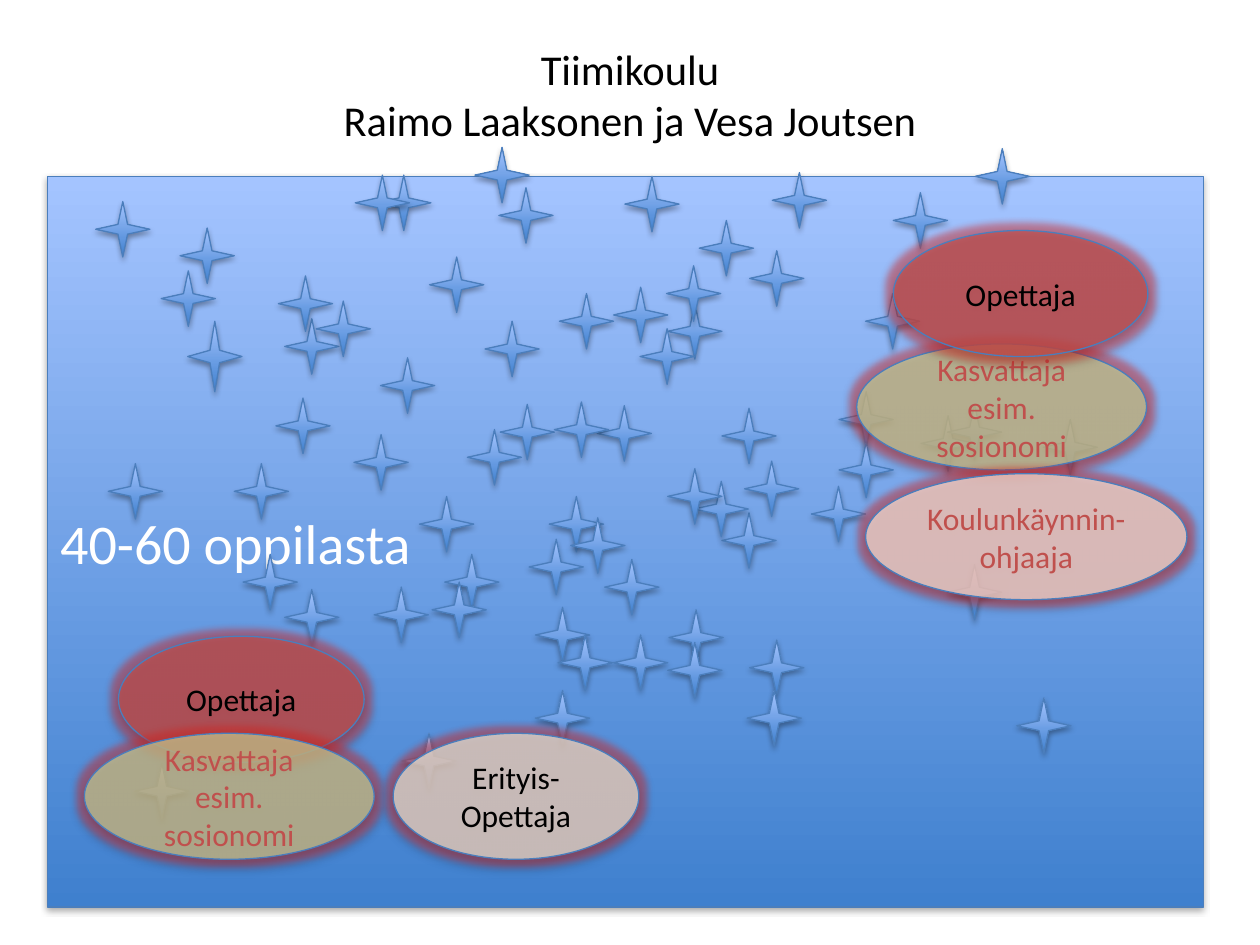
from lxml.etree import SubElement
from pptx import Presentation
from pptx.dml.color import RGBColor
from pptx.enum.shapes import MSO_SHAPE as Shape
from pptx.enum.text import MSO_ANCHOR as Anchor, PP_ALIGN as Align
from pptx.oxml.ns import qn
from pptx.util import Emu, Pt

PX = 9144  # 100 px to the inch
FONT = "Calibri"
BLACK, WHITE, RED = "000000", "FFFFFF", "C0504D"
GREEN, PEACH, PALE_GREEN = "C3D69B", "FDEADA", "EBF1DE"
DEEP_BLUE, LIGHT_BLUE, OUTLINE = "3F80CE", "A4C4FF", "4B7EBC"
PANEL = (38, 140, 917, 580)
STAR_WIDTH, STAR_HEIGHT, TALL_STAR_HEIGHT = 43, 44, 56

# Pupils: left, top within the panel
PUPILS = [
    (148, 228), (315, 300), (281, 442), (155, 300), (305, 322), (628, 171),
    (382, 288), (181, 176), (347, 115), (243, 205), (436, 182), (493, 344),
    (358, 9), (449, 88), (111, 115, TALL_STAR_HEIGHT), (264, 144), (303, 64),
    (535, 267), (535, 184), (387, 342), (188, 113), (90, 75), (339, -23),
    (69, 466), (671, 13), (492, 101), (259, 326), (183, 79), (213, 99),
    (261, -1), (359, 181), (606, 246), (402, 179), (513, 242), (470, 121),
    (557, 59), (406, 93), (442, 304), (492, 232), (405, 364), (492, 370),
    (38, 20), (769, 414), (575, -3), (48, 228), (188, 328), (105, 41),
    (449, 364), (693, 190), (517, 35), (244, -1), (628, 211), (557, 368),
    (649, 93), (387, 408), (333, 201), (295, 254), (553, 226), (398, 254),
    (415, 271), (790, 193), (555, 408), (736, -22), (714, 181), (714, 308),
    (458, 0), (491, 71),
]

# Adults: left, top, width within the panel, fill, text colour, text
ADULTS = [
    (642, 133, 230, GREEN, RED, "Kasvattaja esim. sosionomi"),
    (671, 43, 202, RED, BLACK, "Opettaja"),
    (56, 365, 195, RED, BLACK, "Opettaja"),
    (649, 236, 255, PEACH, RED, "Koulunkäynnin- ohjaaja"),
    (29, 442, 230, GREEN, RED, "Kasvattaja esim. sosionomi"),
    (274, 442, 195, PALE_GREEN, BLACK, "Erityis-\nOpettaja"),
]
ADULT_HEIGHT = 100


def rgb(value):
    return RGBColor.from_string(value)


def px(*lengths):
    return [Emu(length * PX) for length in lengths]


def write(shape, text, *, size, color, align=Align.CENTER):
    frame = shape.text_frame
    frame.word_wrap = True
    frame.vertical_anchor = Anchor.MIDDLE
    frame.text = text
    for paragraph in frame.paragraphs:
        paragraph.alignment = align
        for run in paragraph.runs:
            run.font.name = FONT
            run.font.size = Pt(size)
            run.font.color.rgb = rgb(color)


def add_effects(shape, glow=False):
    """Give the shape a soft shadow below and, on request, a red glow."""
    shape.shadow.inherit = False
    effects = shape._element.spPr.find(qn("a:effectLst"))
    if glow:
        halo = SubElement(effects, qn("a:glow"), rad=str(Pt(8)))
        color = SubElement(halo, qn("a:srgbClr"), val=RED)
        SubElement(color, qn("a:satMod"), val="175000")
        SubElement(color, qn("a:alpha"), val="40000")
    shadow = SubElement(effects, qn("a:outerShdw"), blurRad="40000",
                        dist="23000", dir="5400000", rotWithShape="0")
    color = SubElement(shadow, qn("a:srgbClr"), val=BLACK)
    SubElement(color, qn("a:alpha"), val="35000")


def add_outlined(slide, kind, box, glow=False):
    shape = slide.shapes.add_shape(kind, *px(*box))
    shape.line.color.rgb = rgb(OUTLINE)
    shape.line.width = Pt(0.75)
    add_effects(shape, glow)
    return shape


def add_blue(slide, kind, box):
    shape = add_outlined(slide, kind, box)
    shape.fill.gradient()
    shape.fill.gradient_angle = 90
    for stop, color in zip(shape.fill.gradient_stops, (DEEP_BLUE, LIGHT_BLUE)):
        stop.color.rgb = rgb(color)
    return shape


def add_adult(slide, box, fill, color, text):
    oval = add_outlined(slide, Shape.OVAL, box, glow=True)
    oval.fill.solid()
    oval.fill.fore_color.rgb = rgb(fill)
    tint = oval._element.spPr.find(qn("a:solidFill")).find(qn("a:srgbClr"))
    SubElement(tint, qn("a:alpha"), val="67000")
    write(oval, text, size=18, color=color)


def add_title(slide, box):
    title = slide.shapes.title
    title.left, title.top, title.width, title.height = px(*box)
    write(title, "Tiimikoulu\vRaimo Laaksonen ja Vesa Joutsen", size=24.3, color=BLACK)
    title.text_frame.margin_bottom = px(41)[0]


def add_classroom(slide, box):
    left, top = box[:2]
    panel = add_blue(slide, Shape.RECTANGLE, box)
    write(panel, "40-60 oppilasta", size=32, color=WHITE, align=Align.LEFT)
    for x, y, *height in PUPILS:
        star_height = height[0] if height else STAR_HEIGHT
        add_blue(slide, Shape.STAR_4_POINT, (left + x, top + y, STAR_WIDTH, star_height))
    for x, y, width, *look in ADULTS:
        add_adult(slide, (left + x, top + y, width, ADULT_HEIGHT), *look)


def main():
    deck = Presentation()
    deck.slide_width, deck.slide_height = px(1000, 750)
    slide = deck.slides.add_slide(deck.slide_layouts[5])
    add_title(slide, (50, 30, 900, 125))
    add_classroom(slide, PANEL)
    deck.save("out.pptx")


if __name__ == "__main__":
    main()
